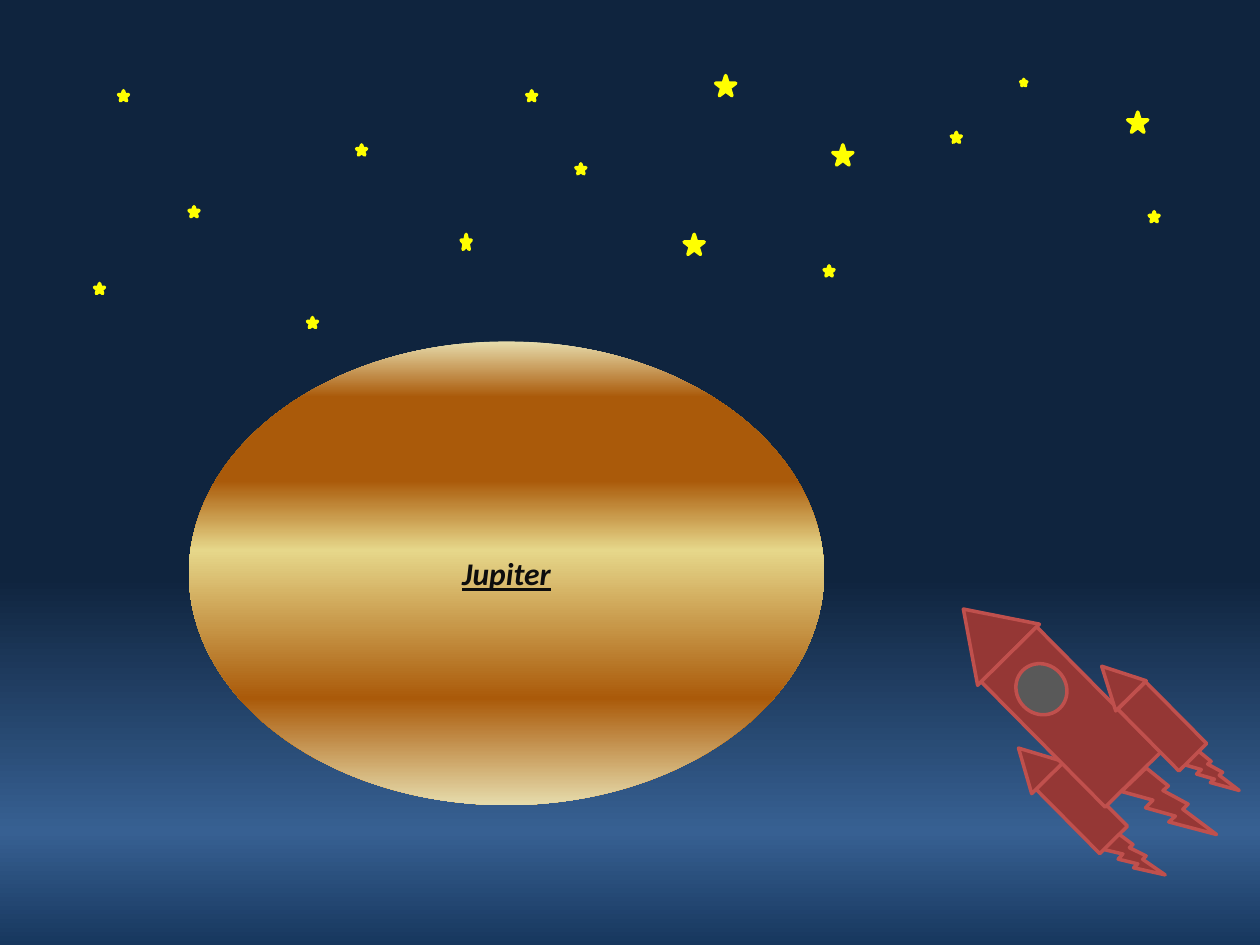
from typing import NamedTuple

from lxml import etree
from pptx import Presentation
from pptx.dml.color import RGBColor
from pptx.enum.shapes import MSO_SHAPE
from pptx.enum.text import MSO_ANCHOR, PP_ALIGN
from pptx.oxml.ns import qn
from pptx.util import Inches, Pt

STAR, OVAL = MSO_SHAPE.STAR_5_POINT, MSO_SHAPE.OVAL
BODY, NOSE, FLAME = MSO_SHAPE.RECTANGLE, MSO_SHAPE.ISOSCELES_TRIANGLE, MSO_SHAPE.LIGHTNING_BOLT

YELLOW = RGBColor(0xFF, 0xFF, 0x00)
HULL = RGBColor(0x95, 0x37, 0x35)
HULL_EDGE = RGBColor(0xC0, 0x50, 0x4D)
WINDOW = RGBColor(0x59, 0x59, 0x59)
INK = RGBColor(0x0D, 0x0D, 0x0D)
NIGHT = RGBColor(0x0F, 0x24, 0x3E)
HORIZON = RGBColor(0x37, 0x60, 0x92)
DUSK = RGBColor(0x17, 0x37, 0x5E)
CREAM = RGBColor(0xE6, 0xDC, 0xAC)
RUST = RGBColor(0xAA, 0x5A, 0x0A)
SAND = RGBColor(0xE6, 0xD7, 0x8A)

TILT = 315.3


class Stop(NamedTuple):
    percent: int
    color: RGBColor


class Star(NamedTuple):
    left: float
    top: float
    width: float = 0.08
    height: float = 0.08


class Part(NamedTuple):
    kind: MSO_SHAPE
    left: float
    top: float
    width: float
    height: float
    rotation: float = TILT
    fill: RGBColor = HULL


SKY = [Stop(0, NIGHT), Stop(34, NIGHT), Stop(61, NIGHT), Stop(88, HORIZON), Stop(100, DUSK)]
BANDS = [Stop(0, CREAM), Stop(12, RUST), Stop(30, RUST), Stop(45, SAND), Stop(77, RUST), Stop(100, CREAM)]

STARS = [
    Star(0.75, 2.25), Star(1.5, 1.64), Star(2.83, 1.15), Star(2.44, 2.52),
    Star(7.55, 1.05), Star(0.94, 0.72), Star(4.57, 1.3), Star(6.54, 2.11),
    Star(4.18, 0.72), Star(3.66, 1.86, 0.08, 0.12), Star(9.12, 1.68),
    Star(8.1, 0.63, 0.05, 0.05), Star(6.61, 1.15, 0.16, 0.16),
    Star(5.68, 0.6, 0.16, 0.16), Star(8.95, 0.89, 0.16, 0.16), Star(5.43, 1.86, 0.16, 0.16),
]

ROCKET = [
    Part(FLAME, 8.78, 6.59, 0.41, 0.43, 341.5),
    Part(BODY, 8.43, 6.05, 0.31, 0.72),
    Part(NOSE, 8.02, 5.89, 0.36, 0.33),
    Part(NOSE, 7.48, 4.76, 0.69, 0.51),
    Part(FLAME, 9.41, 5.94, 0.38, 0.39, 344.7),
    Part(FLAME, 8.95, 6.06, 0.62, 0.67, 342.8),
    Part(BODY, 8.19, 4.99, 0.62, 1.4),
    Part(BODY, 9.07, 5.42, 0.31, 0.69),
    Part(NOSE, 8.69, 5.24, 0.34, 0.33),
    Part(OVAL, 8.07, 5.26, 0.39, 0.42, fill=WINDOW),
]


def set_vertical_gradient(fill, owner, stops: list[Stop]) -> None:
    """Fill top to bottom; owner is the XML element that holds the fill."""
    fill.gradient()
    fill.gradient_angle = 270
    stop_list = owner.xpath(".//a:gsLst")[0]
    for old_stop in list(stop_list):
        stop_list.remove(old_stop)
    for percent, color in stops:
        stop = etree.SubElement(stop_list, qn("a:gs"), pos=str(percent * 1000))
        etree.SubElement(stop, qn("a:srgbClr"), val=str(color))


def add_part(shapes, part: Part, edge: RGBColor) -> None:
    shape = shapes.add_shape(part.kind, Inches(part.left), Inches(part.top),
                             Inches(part.width), Inches(part.height))
    shape.rotation = part.rotation
    shape.shadow.inherit = False
    shape.fill.solid()
    shape.fill.fore_color.rgb = part.fill
    shape.line.color.rgb = edge
    shape.line.width = Pt(2)


def add_planet(page, name: str) -> None:
    planet = page.shapes.add_shape(OVAL, Inches(1.5), Inches(2.71), Inches(5.04), Inches(3.68))
    planet.shadow.inherit = False
    planet.line.fill.background()
    set_vertical_gradient(planet.fill, planet.element, BANDS)
    frame = planet.text_frame
    frame.text = name
    frame.vertical_anchor = MSO_ANCHOR.MIDDLE
    para = frame.paragraphs[0]
    para.alignment = PP_ALIGN.CENTER
    font = para.runs[0].font
    font.name, font.size = "Calibri", Pt(18)
    font.bold = font.italic = font.underline = True
    font.color.rgb = INK


def main() -> None:
    deck = Presentation()
    deck.slide_width, deck.slide_height = Inches(10), Inches(7.5)
    page = deck.slides.add_slide(deck.slide_layouts[6])
    set_vertical_gradient(page.background.fill, page.element, SKY)

    stars = page.shapes.add_group_shape().shapes
    for star in STARS:
        add_part(stars, Part(STAR, *star, rotation=0, fill=YELLOW), YELLOW)
    add_planet(page, "Jupiter")
    rocket = page.shapes.add_group_shape().shapes
    for part in ROCKET:
        add_part(rocket, part, HULL_EDGE)

    deck.save("out.pptx")


if __name__ == "__main__":
    main()
